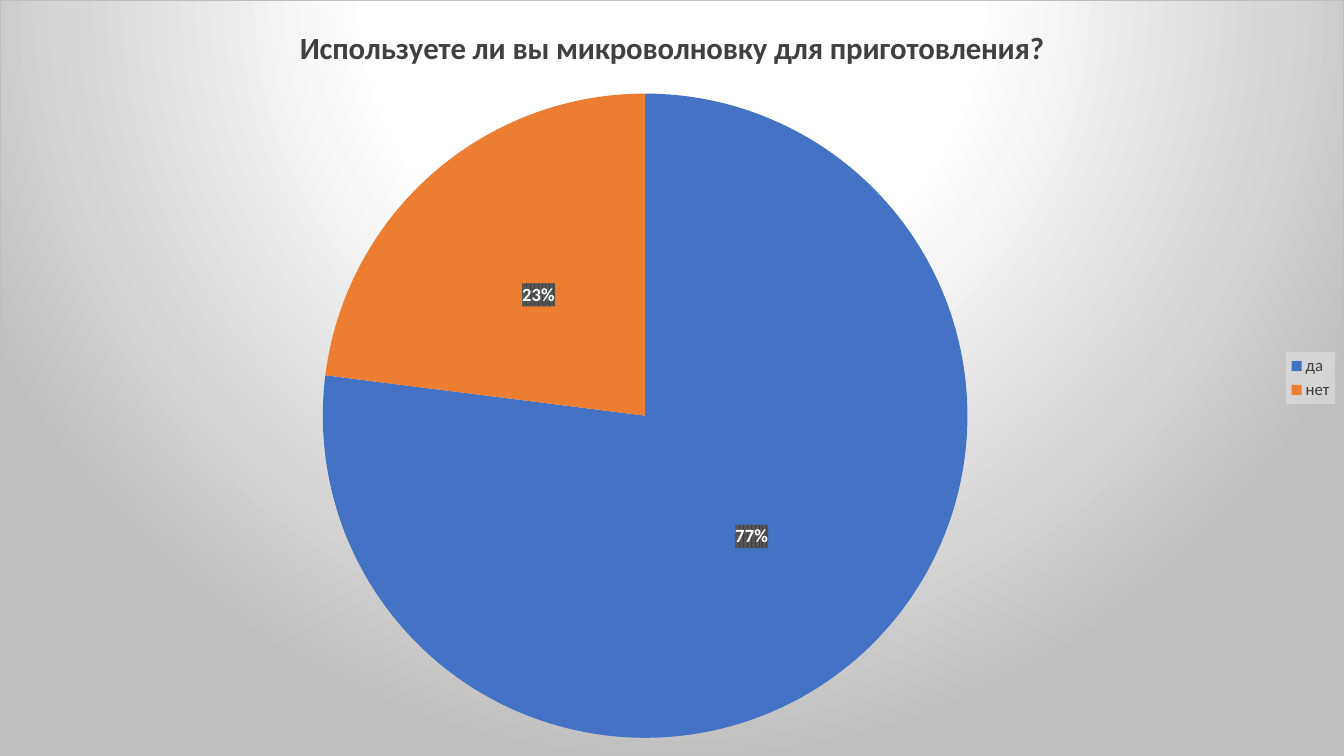
from dataclasses import dataclass

from lxml import etree
from pptx import Presentation
from pptx.chart.chart import Chart
from pptx.chart.data import CategoryChartData
from pptx.dml.color import RGBColor
from pptx.enum.chart import XL_CHART_TYPE as ChartType
from pptx.enum.chart import XL_LABEL_POSITION as LabelPosition
from pptx.enum.chart import XL_LEGEND_POSITION as LegendPosition
from pptx.oxml import parse_xml
from pptx.oxml.ns import nsdecls
from pptx.text.text import Font
from pptx.util import Pt

SLIDE_WIDTH, SLIDE_HEIGHT = Pt(960), Pt(540)
QUESTION = "Используете ли вы микроволновку для приготовления?"
COLORS = {
    "yes": "4472C4",
    "no": "ED7D31",
    "white": "FFFFFF",
    "edge": "BFBFBF",
    "text": "404040",
    "pattern": "595959",
    "legend": "F2F2F2",
    "black": "000000",
}
FORMATS = {
    "chart": {"name": "Calibri", "size": Pt(10)},
    "title": {"name": "Calibri", "size": Pt(22), "bold": True},
    "legend": {"name": "Calibri", "size": Pt(12), "bold": False},
    "label": {"name": "Calibri", "size": Pt(13.3), "bold": True},
}
PLOT_FRAME = {"x": 0.24, "y": 0.12, "w": 0.48, "h": 0.86}


@dataclass(frozen=True)
class Answer:
    name: str
    percent: int
    color: str


ANSWERS = [Answer("да", 77, "yes"), Answer("нет", 23, "no")]


def color_xml(color: str, alpha: int = 100) -> str:
    return f'<a:srgbClr val="{COLORS[color]}"><a:alpha val="{alpha * 1000}"/></a:srgbClr>'


def gradient_xml(stops: dict[int, str]) -> str:
    stop_list = "".join(
        f'<a:gs pos="{position * 1000}">{color_xml(color)}</a:gs>'
        for position, color in stops.items()
    )
    return (
        f'<a:gradFill><a:gsLst>{stop_list}</a:gsLst><a:path path="circle">'
        '<a:fillToRect l="50000" t="-80000" r="50000" b="180000"/></a:path></a:gradFill>'
    )


BACKGROUND = (
    gradient_xml({0: "white", 39: "white", 100: "edge"})
    + f'<a:ln w="{Pt(0.75)}"><a:solidFill>{color_xml("edge")}</a:solidFill></a:ln>'
)
LABEL_PATTERN = (
    f'<a:pattFill prst="pct75"><a:fgClr>{color_xml("text")}</a:fgClr>'
    f'<a:bgClr>{color_xml("pattern")}</a:bgClr></a:pattFill>'
)
LEGEND_FILL = f'<a:solidFill>{color_xml("legend", 39)}</a:solidFill>'


def format_font(font: Font, kind: str, color: str) -> None:
    for attribute, value in FORMATS[kind].items():
        setattr(font, attribute, value)
    font.color.rgb = RGBColor.from_string(COLORS[color])


def style_area(parent: etree.ElementBase, style: str) -> None:
    """Put shape properties just before the text properties of a chart part."""
    properties = parse_xml(f'<c:spPr {nsdecls("c", "a")}>{style}</c:spPr>')
    parent.xpath("./c:txPr")[0].addprevious(properties)


def place_plot(chart: Chart) -> None:
    plot_area = chart.element.xpath(".//c:plotArea")[0]
    for layout in plot_area.xpath("./c:layout"):
        plot_area.remove(layout)
    frame = "".join(f'<c:{key} val="{value}"/>' for key, value in PLOT_FRAME.items())
    plot_area.insert(0, parse_xml(
        f'<c:layout {nsdecls("c")}><c:manualLayout><c:layoutTarget val="inner"/>'
        f'<c:xMode val="edge"/><c:yMode val="edge"/>{frame}</c:manualLayout></c:layout>'
    ))


def add_answer_chart(shapes) -> Chart:
    data = CategoryChartData()
    data.categories = [answer.name for answer in ANSWERS]
    data.add_series(QUESTION, [answer.percent for answer in ANSWERS])
    return shapes.add_chart(ChartType.PIE, 0, 0, SLIDE_WIDTH, SLIDE_HEIGHT, data).chart


def style_chart(chart: Chart) -> None:
    format_font(chart.font, "chart", "black")
    chart.has_title = True
    title = chart.chart_title.text_frame
    title.text = QUESTION
    format_font(title.paragraphs[0].runs[0].font, "title", "text")

    chart.has_legend = True
    chart.legend.position = LegendPosition.RIGHT
    chart.legend.include_in_layout = False
    format_font(chart.legend.font, "legend", "text")

    plot = chart.plots[0]
    plot.vary_by_categories = True
    for index, answer in enumerate(ANSWERS):
        fill = plot.series[0].points[index].format.fill
        fill.solid()
        fill.fore_color.rgb = RGBColor.from_string(COLORS[answer.color])

    labels = plot.series[0].data_labels
    format_font(labels.font, "label", "white")
    label_settings = {
        "show_percentage": True,
        "show_value": False,
        "number_format": "0%",
        "number_format_is_linked": False,
        "position": LabelPosition.CENTER,
    }
    for attribute, value in label_settings.items():
        setattr(labels, attribute, value)

    style_area(chart.element, BACKGROUND)
    style_area(chart.element.xpath(".//c:legend")[0], LEGEND_FILL)
    style_area(chart.element.xpath(".//c:ser/c:dLbls")[0], LABEL_PATTERN)
    place_plot(chart)


def main() -> None:
    presentation = Presentation()
    presentation.slide_width, presentation.slide_height = SLIDE_WIDTH, SLIDE_HEIGHT
    slide = presentation.slides.add_slide(presentation.slide_layouts[6])
    style_chart(add_answer_chart(slide.shapes))
    presentation.save("out.pptx")


if __name__ == "__main__":
    main()
